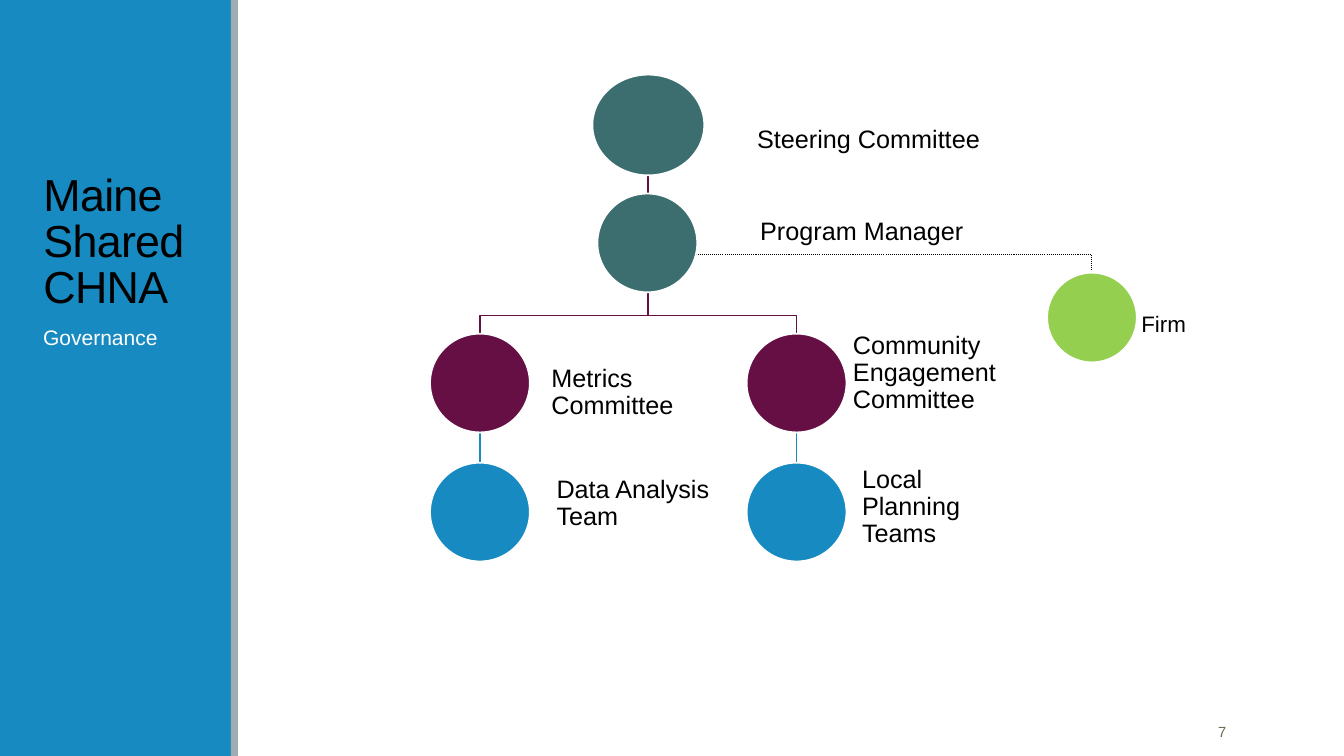
from pptx import Presentation
from pptx.dml.color import RGBColor
from pptx.enum.dml import MSO_LINE
from pptx.enum.shapes import MSO_CONNECTOR, MSO_SHAPE
from pptx.enum.text import MSO_ANCHOR, PP_ALIGN
from pptx.oxml.ns import qn
from pptx.util import Inches, Pt

BLUE = RGBColor(0x17, 0x8A, 0xC1)
GREY = RGBColor(0x9F, 0xAD, 0xB1)
TEAL = RGBColor(0x3C, 0x6E, 0x6F)
PLUM = RGBColor(0x66, 0x0F, 0x44)
GREEN = RGBColor(0x94, 0xCF, 0x4F)
OLIVE = RGBColor(0x63, 0x70, 0x52)
BLACK = RGBColor(0, 0, 0)
WHITE = RGBColor(0xFF, 0xFF, 0xFF)

RECTANGLE, OVAL = MSO_SHAPE.RECTANGLE, MSO_SHAPE.OVAL
STRAIGHT = MSO_CONNECTOR.STRAIGHT
DOTTED = MSO_LINE.ROUND_DOT
TOP, MIDDLE, BOTTOM = MSO_ANCHOR.TOP, MSO_ANCHOR.MIDDLE, MSO_ANCHOR.BOTTOM
LEFT, RIGHT = PP_ALIGN.LEFT, PP_ALIGN.RIGHT

deck = Presentation()
deck.slide_width, deck.slide_height = Inches(13.33), Inches(7.5)
page = deck.slides.add_slide(deck.slide_layouts[5])
shapes = page.shapes


def write(text, place, box=None, size=18, color=BLACK, anchor=MIDDLE,
          align=LEFT, spacing=0.9, inset=0.07, right_inset=None):
    """Put one paragraph in the given box, or in a new text box at place."""
    left, top, width, height = map(Inches, place)
    box = box or shapes.add_textbox(left, top, width, height)
    box.left, box.top, box.width, box.height = left, top, width, height
    frame = box.text_frame
    frame.word_wrap = True
    frame.vertical_anchor = anchor
    frame.margin_left = frame.margin_right = Inches(inset)
    frame.margin_top = frame.margin_bottom = Inches(min(inset, 0.05))
    if right_inset:
        frame.margin_right = Inches(right_inset)
    para = frame.paragraphs[0]
    para.alignment, para.line_spacing = align, spacing
    span = para.add_run()
    span.text = text
    span.font.name, span.font.size = "Arial", Pt(size)
    span.font.color.rgb = color
    return span


def add_filled(kind, left, top, width, height, color):
    shape = shapes.add_shape(kind, *map(Inches, (left, top, width, height)))
    shape.shadow.inherit = False
    shape.fill.solid()
    shape.fill.fore_color.rgb = color
    shape.line.fill.background()
    return shape


# Side panel, behind the title
panel_width = 2.29
panel = add_filled(RECTANGLE, 0, 0, panel_width, 7.5, BLUE)
edge = add_filled(RECTANGLE, panel_width, 0, 0.07, 7.5, GREY)
title = shapes.title
for bar in (panel, edge):
    title._element.addprevious(bar._element)

heading = write("Maine Shared CHNA", (0.33, 0.65, 2.87, 2.5), box=title, size=32,
                anchor=BOTTOM, spacing=0.85, inset=0.1, right_inset=0.6)
heading._r.get_or_add_rPr().set("spc", "-50")
write("Governance", (0.33, 3.2, 2.87, 3.7), size=15, color=WHITE,
      anchor=TOP, inset=0.1)

# Chart columns and rows: centres of the circles
metrics_x, manager_x, community_x, partner_x = 4.76, 6.43, 7.9, 10.83
steering_y, manager_y, partner_y, committee_y, team_y = 1.24, 2.41, 3.15, 3.8, 5.08
branch_y = 3.13

# Lines from the top of the chart, each with one bend
routes = [
    (partner_x, 2.53, 2.71, BLACK, 0.75, DOTTED),
    (community_x, branch_y, 3.31, PLUM, 1.25, None),
    (metrics_x, branch_y, 3.31, PLUM, 1.25, None),
]
for end_x, bend_y, end_y, color, weight, dash in routes:
    builder = shapes.build_freeform(Inches(manager_x), Inches(1.73))
    corners = [(manager_x, bend_y), (end_x, bend_y), (end_x, end_y)]
    builder.add_line_segments([(Inches(x), Inches(y)) for x, y in corners], close=False)
    route = builder.convert_to_shape()
    route.shadow.inherit = False
    route.fill.background()
    route.line.color.rgb = color
    route.line.width = Pt(weight)
    if dash:
        route.line.dash_style = dash

for x in (metrics_x, community_x):
    link = shapes.add_connector(STRAIGHT, Inches(x), Inches(4.29), Inches(x), Inches(4.59))
    link.line.color.rgb = BLUE
    link.line.width = Pt(1.25)
    properties = link._element.spPr
    properties.append(properties.makeelement(qn("a:effectLst"), {}))

# Circle centre, width, height, colour; label, its place and size
roles = [
    (manager_x - 0.01, manager_y, 0.99, 0.98, TEAL,
     "Program Manager", (7.47, 1.75, 3.03, 1.11), 18),
    (manager_x, steering_y, 1.11, 1, TEAL,
     "Steering Committee", (7.44, 0.58, 2.44, 1.63), 18),
    (metrics_x, committee_y, 0.99, 0.98, PLUM,
     "Metrics Committee", (5.4, 3.34, 1.67, 1.11), 18),
    (metrics_x, team_y, 0.99, 0.98, BLUE,
     "Data Analysis Team", (5.45, 4.44, 1.67, 1.11), 18),
    (community_x, committee_y, 0.99, 0.98, PLUM,
     "Community Engagement Committee", (8.39, 3.15, 1.67, 1.11), 18),
    (community_x, team_y, 0.99, 0.98, BLUE,
     "Local Planning Teams", (8.48, 4.48, 1.67, 1.11), 18),
    (partner_x, partner_y, 0.89, 0.89, GREEN,
     "Firm", (11.25, 2.67, 1.67, 1.11), 16),
]
for x, y, width, height, color, label, place, size in roles:
    circle = add_filled(OVAL, x - width / 2, y - height / 2, width, height, color)
    circle.line.color.rgb = WHITE
    circle.line.width = Pt(1.25)
    write(label, place, size=size)

write("7", (10.83, 7.06, 1.43, 0.4), size=10.5, color=OLIVE,
      align=RIGHT, spacing=1.0, inset=0.1)

deck.save("out.pptx")
